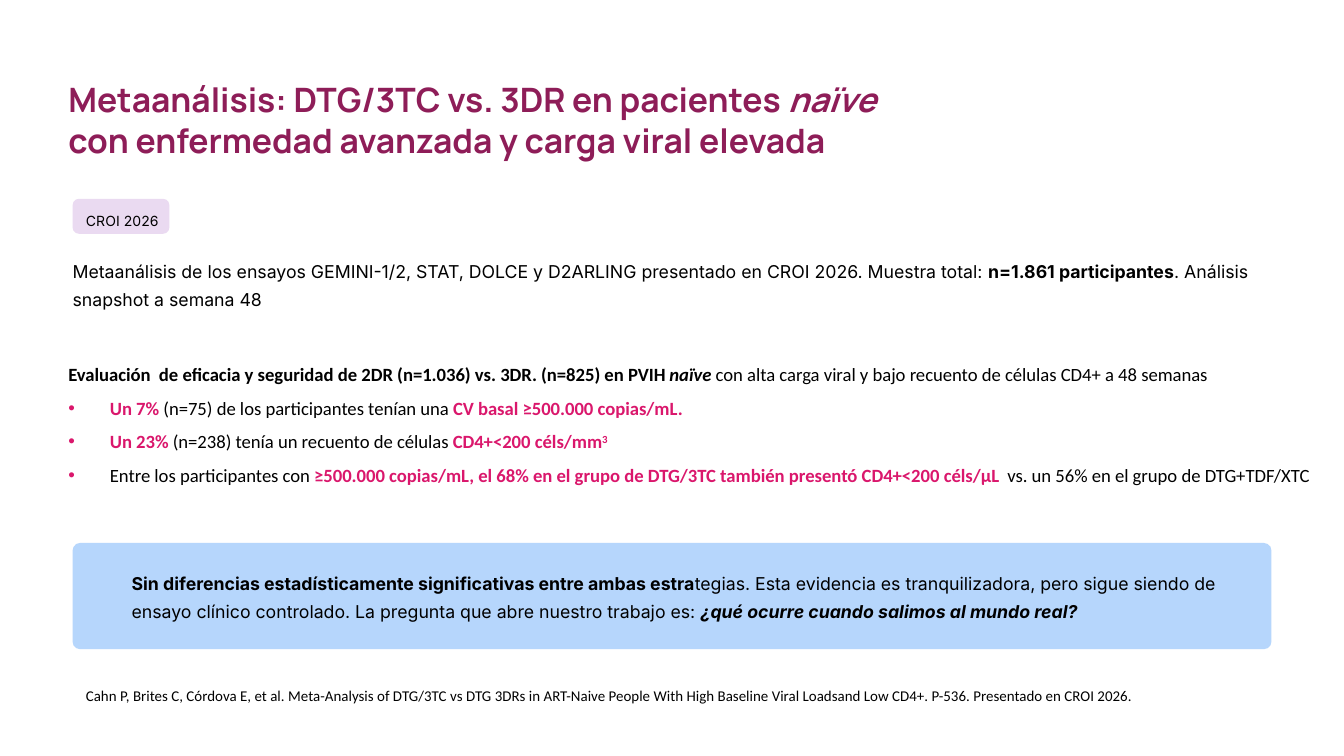
import pptx
import pptx.util
import pptx.dml.color
import pptx.enum.shapes
from lxml import etree

RGB = pptx.dml.color.RGBColor
BLACK = RGB(0x00, 0x00, 0x00)
PLUM = RGB(0x8E, 0x1D, 0x58)
PINK = RGB(0xDA, 0x17, 0x6C)
LILAC = RGB(0xEA, 0xDA, 0xF1)
SKY = RGB(0xB6, 0xD6, 0xFC)

# Content: a line is a list of (text, marks)
# marks: b bold, i italic, p pink, s superscript
TITLE = [
    [("Metaanálisis: DTG/3TC vs. 3DR en pacientes ", "b"), ("naïve", "bi")],
    [("con enfermedad avanzada y carga viral elevada", "b")],
]
TAG = [[("CROI 2026", "")]]
INTRO = [[
    ("Metaanálisis de los ensayos GEMINI-1/2, STAT, DOLCE y D2ARLING "
     "presentado en CROI 2026. Muestra total: ", ""),
    ("n=1.861 participantes", "b"),
    (". Análisis snapshot a semana 48", ""),
]]
LEAD = [
    ("Evaluación  de eficacia y seguridad de 2DR (n=1.036) vs. 3DR. "
     "(n=825) en PVIH ", "b"),
    ("naïve ", "bi"),
    ("con alta carga viral y bajo recuento de células CD4+ a 48 semanas", ""),
]
POINTS = [
    [("Un 7%", "bp"), (" (n=75) de los participantes tenían una ", ""),
     ("CV basal ≥500.000 copias/mL.", "bp")],
    [("Un 23% ", "bp"), ("(n=238) tenía un recuento de células ", ""),
     ("CD4+<200 céls/mm", "bp"), ("3", "bps")],
    [("Entre los participantes con ", ""),
     ("≥500.000 copias/mL, el 68% en el grupo de DTG/3TC también presentó "
      "CD4+<200 céls/µL  ", "bp"),
     ("vs. un 56% en el grupo de DTG+TDF/XTC", "")],
]
CLOSE = [[
    ("Sin diferencias estadísticamente significativas entre ambas estra", "b"),
    ("tegias. Esta evidencia es tranquilizadora, pero sigue siendo de ensayo "
     "clínico controlado. La pregunta que abre nuestro trabajo es: ", ""),
    ("¿qué ocurre cuando salimos al mundo real?", "bi"),
]]
SOURCE = [[
    ("Cahn P, Brites C, Córdova E, et al. Meta-Analysis of DTG/3TC vs DTG 3DRs "
     "in ART-Naive People With High Baseline Viral Loadsand Low CD4+. P-536. "
     "Presentado en CROI 2026.", ""),
]]

# Layout in inches
WIDE = 10
HIGH = WIDE * 9 / 16
LEFT = 0.54                 # edge of the panels
SPAN = WIDE - 2 * LEFT      # width of the panels
PAD, TOP = 0.1, 0.05        # insets of the padded boxes
EDGE = 0.41                 # edge of the padded boxes
HANG = 0.31                 # bullet indent
LOOSE, OPEN = 1.33, 1.5     # line spacings

deck = pptx.Presentation()
deck.slide_width = pptx.util.Inches(WIDE)
deck.slide_height = pptx.util.Inches(HIGH)
slide = deck.slides.add_slide(deck.slide_layouts[6])


def place(*box):
    return [pptx.util.Inches(n) for n in box]


def panel(box, fill, curve):
    shape = slide.shapes.add_shape(
        pptx.enum.shapes.MSO_SHAPE.ROUNDED_RECTANGLE, *place(*box))
    shape.adjustments[0] = curve
    shape.shadow.inherit = False
    shape.fill.solid()
    shape.fill.fore_color.rgb = fill
    shape.line.fill.background()


def bullet(para):
    props = para._p.get_or_add_pPr()
    props.set("marL", str(pptx.util.Inches(HANG)))
    props.set("indent", str(-pptx.util.Inches(HANG)))
    tint = etree.SubElement(props, pptx.oxml.ns.qn("a:buClr"))
    etree.SubElement(tint, pptx.oxml.ns.qn("a:srgbClr"), val=str(PINK))
    etree.SubElement(props, pptx.oxml.ns.qn("a:buFont"), typeface="Arial")
    etree.SubElement(props, pptx.oxml.ns.qn("a:buChar"), char="•")


def write(box, lines, face, size, color=BLACK, gap=None, pad=(0, 0),
          wrap=True, dots=()):
    frame = slide.shapes.add_textbox(*place(*box)).text_frame
    frame.word_wrap = wrap
    frame.margin_left = frame.margin_right = pptx.util.Inches(pad[0])
    frame.margin_top = frame.margin_bottom = pptx.util.Inches(pad[1])
    for n, line in enumerate([*lines, *dots]):
        para = frame.add_paragraph() if n else frame.paragraphs[0]
        if n >= len(lines):
            bullet(para)
            para.line_spacing = OPEN
        elif gap:
            para.line_spacing = gap
        para.font.name = face
        para.font.size = pptx.util.Pt(size)
        for text, marks in line:
            run = para.add_run()
            run.text = text
            run.font.bold = "b" in marks
            run.font.italic = "i" in marks
            run.font.color.rgb = PINK if "p" in marks else color
            if "s" in marks:
                run._r.get_or_add_rPr().set("baseline", "30000")


# Heading and tag
write((EDGE, 0.54, WIDE - 2 * EDGE, 0.71), TITLE, "Manrope", 18, PLUM,
      pad=(PAD, TOP))
panel((LEFT, 1.48, 0.72, 0.26), LILAC, 0.18)
write((LEFT + PAD, 1.54, 1.06, 0.17), TAG, "Inter", 7.5, gap=LOOSE, wrap=False)

# Introduction and findings
write((LEFT, 1.89, SPAN, 0.43), INTRO, "Inter", 9.5, gap=LOOSE)
write((EDGE, 2.65, 9.5, 1.25), [LEAD], "Calibri", 10, pad=(PAD, TOP),
      dots=POINTS)

# Conclusion
panel((LEFT, 4.04, SPAN, 0.79), SKY, 0.07)
write((0.98, 4.21, 8.34, 0.43), CLOSE, "Inter", 9.5, gap=LOOSE)

# Reference
write((LEFT, 5.06, SPAN, 0.24), SOURCE, "Calibri", 8, pad=(PAD, TOP))

deck.save("out.pptx")
